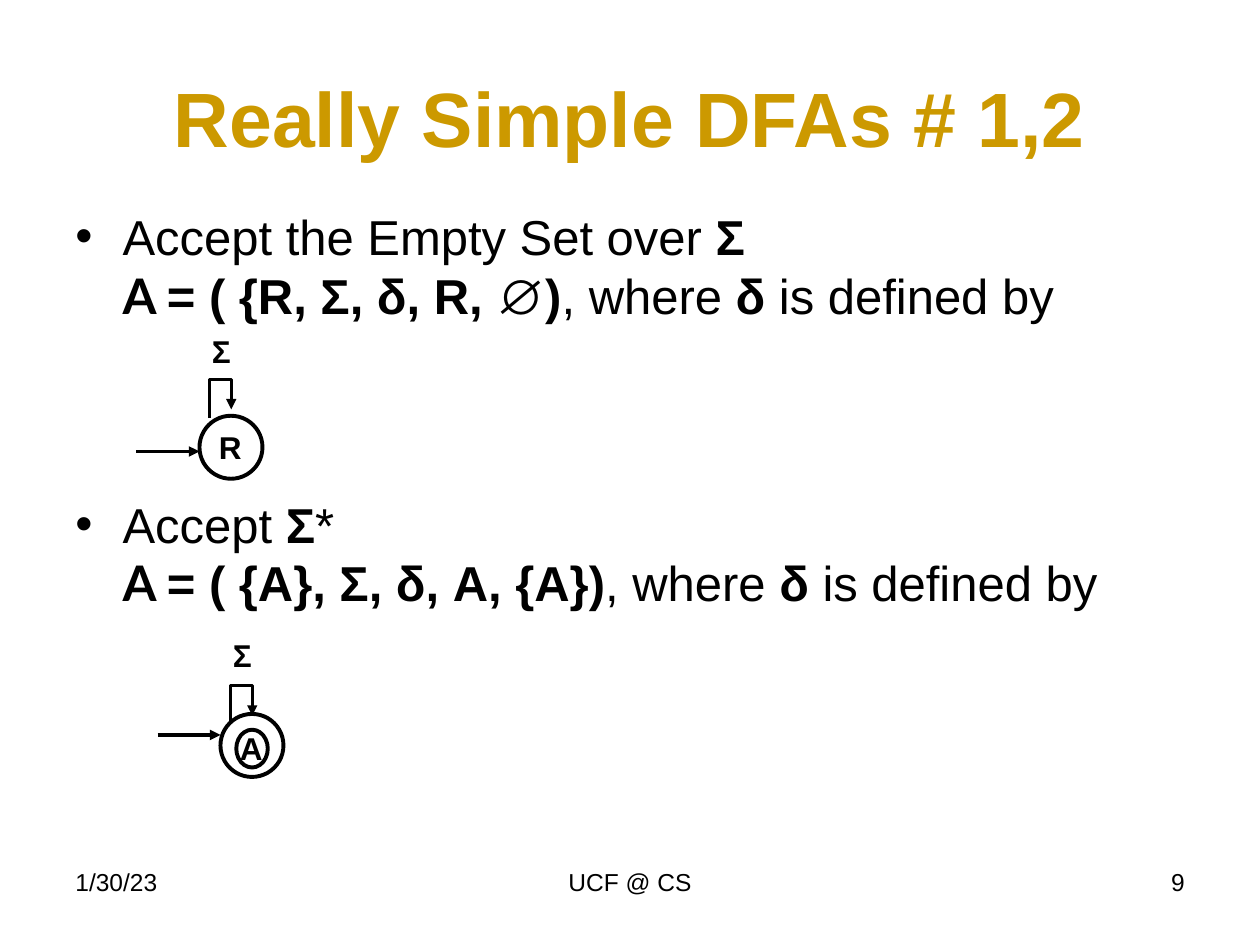
from lxml import etree
from pptx import Presentation
from pptx import util as u
from pptx.dml.color import RGBColor
from pptx.enum import shapes, text
from pptx.oxml.ns import qn

ALIGN = text.PP_ALIGN


def rgb(value):
    return RGBColor.from_string(value)


def add_element(parent, tag, **attributes):
    return etree.SubElement(parent, qn(tag), attributes)


class Style:
    font = "Arial"
    ink = "000000"
    gold = "CC9900"

    def __init__(self, page):
        self.page = page

    def span(self, para, words, size, bold=False, font=None, color=None):
        span = para.add_run()
        span.text = words
        span.font.size = u.Pt(size)
        span.font.bold = bold
        span.font.name = font or self.font
        span.font.color.rgb = rgb(color or self.ink)

    def title(self, words, left, top, width, height):
        box = self.page.shapes.title
        box.left, box.top = u.Pt(left), u.Pt(top)
        box.width, box.height = u.Pt(width), u.Pt(height)
        frame = box.text_frame
        frame.auto_size = text.MSO_AUTO_SIZE.NONE
        frame.vertical_anchor = text.MSO_ANCHOR.MIDDLE
        para = frame.paragraphs[0]
        para.alignment = ALIGN.CENTER
        self.span(para, words, 44, bold=True, color=self.gold)

    def box(self, left, top, width, height, wrap=True):
        box = self.page.shapes.add_textbox(
            u.Pt(left), u.Pt(top), u.Pt(width), u.Pt(height))
        box.text_frame.word_wrap = wrap
        return box.text_frame

    def label(self, words, left, top, width, height, size=18, bold=True,
              align=ALIGN.LEFT, wrap=True):
        para = self.box(left, top, width, height, wrap).paragraphs[0]
        para.alignment = align
        self.span(para, words, size, bold)

    def bullets(self, items, left, top, width, height, gap):
        """Each item is a list of lines; each line is a list of (words, bold, font)."""
        frame = self.box(left, top, width, height)
        frame.margin_top = u.Pt(6.5)
        for number, lines in enumerate(items):
            para = frame.add_paragraph() if number else frame.paragraphs[0]
            properties = para._p.get_or_add_pPr()
            properties.set("marL", str(u.Pt(27)))
            properties.set("indent", str(-u.Pt(27)))
            add_element(properties, "a:buFont", typeface=self.font)
            add_element(properties, "a:buChar", char="•")
            if number:
                para.space_before = u.Pt(gap)
            for line_number, line in enumerate(lines):
                if line_number:
                    para.add_line_break()
                for words, bold, font in line:
                    self.span(para, words, 28, bold, font)

    def ellipse(self, left, top, width, height):
        shape = self.page.shapes.add_shape(
            shapes.MSO_SHAPE.OVAL, u.Pt(left), u.Pt(top), u.Pt(width), u.Pt(height))
        shape.shadow.inherit = False
        shape.fill.background()
        shape.line.color.rgb = rgb(self.ink)
        shape.line.width = u.Pt(2.25)

    def arrow(self, start, end, weight=2, kind=shapes.MSO_CONNECTOR.STRAIGHT):
        arrow = self.page.shapes.add_connector(
            kind, *(u.Pt(value) for value in start + end))
        arrow.line.color.rgb = rgb(self.ink)
        arrow.line.width = u.Pt(weight)
        properties = arrow._element.spPr
        add_element(properties.find(qn("a:ln")), "a:tailEnd", type="triangle")
        add_element(properties, "a:effectLst")
        return arrow

    def loop(self, left, bottom):
        """Elbow that rises from (left, bottom), then turns right and down."""
        rise, span = 5, 12.6
        middle_x, middle_y = left + span / 2, bottom - rise / 2
        arrow = self.arrow((middle_x + rise / 2, middle_y + span / 2),
                           (middle_x - rise / 2, middle_y - span / 2),
                           1.75, shapes.MSO_CONNECTOR.ELBOW)
        properties = arrow._element.spPr
        properties.find(qn("a:xfrm")).set("rot", "5400000")
        geometry = properties.find(qn("a:prstGeom"))
        guides = geometry.find(qn("a:avLst"))
        if guides is None:
            guides = add_element(geometry, "a:avLst")
        add_element(guides, "a:gd", name="adj1", fmla="val 441400")

    def state(self, name, left, top, entry, loop, symbol, letter, accepting=False):
        """Draw a state; entry, loop, symbol and letter are offsets below its top."""
        self.arrow((left - 36, top + entry), (left, top + entry))
        self.ellipse(left, top, 36, 36)
        self.loop(left + 5.5, top + loop)
        self.label("Σ", left, top + symbol, 42, 29)
        if accepting:
            self.ellipse(left + 9, top + 9, 18, 21.6)
        self.label(name, left + 4, top + letter, 27.4, 29, wrap=False)


def main():
    deck = Presentation()
    deck.slide_width, deck.slide_height = u.Pt(720), u.Pt(540)
    style = Style(deck.slides.add_slide(deck.slide_layouts[5]))

    style.title("Really Simple DFAs # 1,2", 36, 21.6, 648, 90)

    ending = [(", where ", False, None), ("δ", True, None),
              (" is defined by", False, None)]
    machine = ("A ", True, "Lato")
    style.bullets([
        [[("Accept the Empty Set over ", False, None), ("Σ", True, None)],
         [machine, ("= ( {R, Σ, δ, R, ∅)", True, None)] + ending],
        [[("Accept ", False, None), ("Σ", True, None), ("*", False, None)],
         [machine, ("= ( {A}, Σ, δ, A, {A})", True, None)] + ending],
    ], 36, 111.6, 648, 356.4, gap=97)

    style.state("R", 114, 237.6, entry=20.4, loop=1.4, symbol=-51.6, letter=3.6)
    style.state("A", 126, 408, entry=12, loop=6, symbol=-48, letter=5.3,
                accepting=True)

    for words, left, width, align in (("1/30/23", 36, 168, ALIGN.LEFT),
                                      ("UCF @ CS", 246, 228, ALIGN.CENTER),
                                      ("9", 516, 168, ALIGN.RIGHT)):
        style.label(words, left, 492, width, 37.5, 14, False, align)

    deck.save("out.pptx")


if __name__ == "__main__":
    main()
